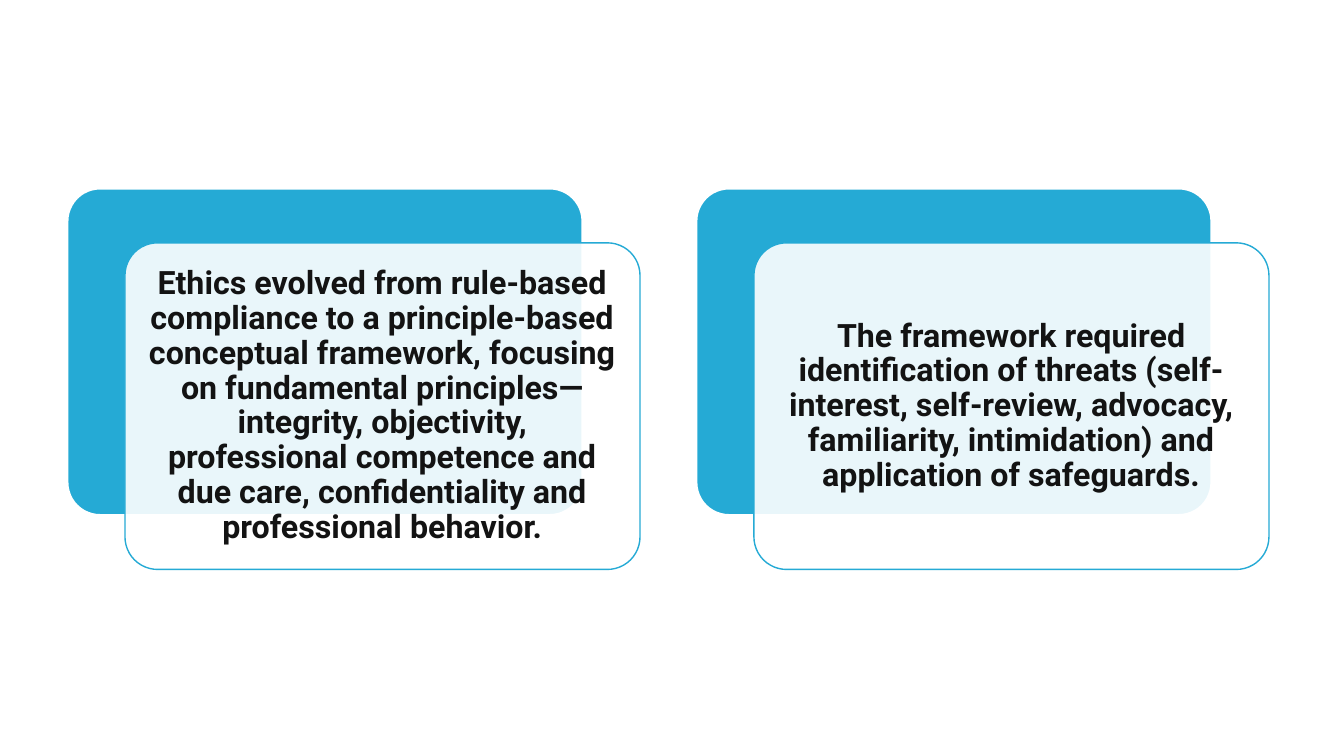
import pptx
import pptx.util
import pptx.dml.color
import pptx.enum.shapes
import pptx.enum.text
import pptx.oxml
import pptx.oxml.ns

Cm = pptx.util.Cm
Pt = pptx.util.Pt

NOTES = [
    "Ethics evolved from rule-based compliance to a principle-based conceptual "
    "framework, focusing on fundamental principles—integrity, objectivity, "
    "professional competence and due care, confidentiality and professional behavior.",
    "The framework required identification of threats (self-interest, self-review, "
    "advocacy, familiarity, intimidation) and application of safeguards.",
]
HUES = {"blue": "25AAD5", "white": "FFFFFF", "ink": "131313"}
FONT = "Roboto"
LEFT, TOP = 1.7, 4.75
WIDE, HIGH = 12.98, 8.23
STEP = 15.85
SHIFT_X, SHIFT_Y = 1.45, 1.37
INSET = 0.24
PAD = 0.25


def hue(name):
    return pptx.dml.color.RGBColor.from_string(HUES[name])


def add_card(slide, x, y, fill, line, width, alpha=None):
    kind = pptx.enum.shapes.MSO_SHAPE.ROUNDED_RECTANGLE
    card = slide.shapes.add_shape(kind, Cm(x), Cm(y), Cm(WIDE), Cm(HIGH))
    card.adjustments[0] = 0.1
    card.shadow.inherit = False
    card.fill.solid()
    card.fill.fore_color.rgb = hue(fill)
    card.line.color.rgb = hue(line)
    card.line.width = Pt(width)
    if alpha is not None:
        tint = card.fill._xPr.find(".//" + pptx.oxml.ns.qn("a:srgbClr"))
        node = pptx.oxml.parse_xml(
            f'<a:alpha {pptx.oxml.ns.nsdecls("a")} val="{alpha * 1000}"/>')
        tint.append(node)


def add_note(slide, x, y, text):
    box = slide.shapes.add_textbox(
        Cm(x + INSET), Cm(y + INSET), Cm(WIDE - 2 * INSET), Cm(HIGH - 2 * INSET))
    frame = box.text_frame
    frame.word_wrap = True
    frame.vertical_anchor = pptx.enum.text.MSO_ANCHOR.MIDDLE
    frame.margin_left = frame.margin_right = Cm(PAD)
    frame.margin_top = frame.margin_bottom = Cm(PAD)
    para = frame.paragraphs[0]
    para.alignment = pptx.enum.text.PP_ALIGN.CENTER
    para.line_spacing = 0.9
    run = para.add_run()
    run.text = text
    run.font.name = FONT
    run.font.size = Pt(23)
    run.font.bold = True
    run.font.color.rgb = hue("ink")


def main():
    deck = pptx.Presentation()
    deck.slide_width, deck.slide_height = Cm(33.87), Cm(19.05)
    slide = deck.slides.add_slide(deck.slide_layouts[6])
    for i, text in enumerate(NOTES):
        x = LEFT + i * STEP
        front = x + SHIFT_X, TOP + SHIFT_Y
        add_card(slide, x, TOP, "blue", "white", 1.5)
        add_card(slide, *front, "white", "blue", 1, alpha=90)
        add_note(slide, *front, text)
    deck.save("out.pptx")


if __name__ == "__main__":
    main()
